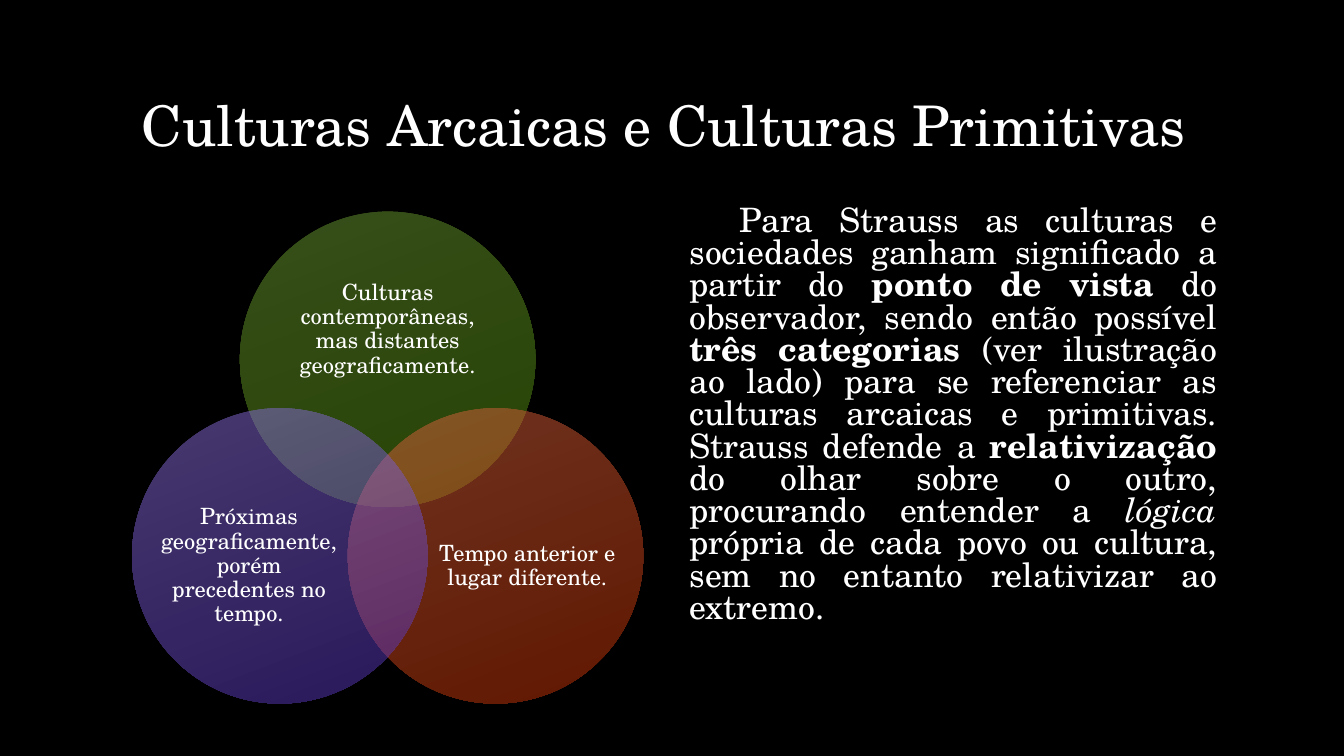
from lxml import etree
from pptx import Presentation
from pptx.dml.color import RGBColor
from pptx.enum import shapes, text
from pptx.oxml.ns import qn
from pptx.util import Inches, Pt

FONT = "TeX Gyre Schola"
WHITE = "FFFFFF"
DIAMETER = 2.93
TITLE = "Culturas Arcaicas e Culturas Primitivas"
CIRCLES = [
    ("Culturas contemporâneas, mas distantes geograficamente.",
     "6E9D35", "4E8808", (1.07, 0), (0.39, 0.51, 2.15, 1.32)),
    ("Tempo anterior e lugar diferente.",
     "DE6742", "C23002", (2.14, 1.95), (0.9, 0.76, 1.76, 1.61)),
    ("Próximas geograficamente, porém precedentes no tempo.",
     "8F73DF", "5331B6", (0, 1.95), (0.28, 0.76, 1.76, 1.61)),
]
BODY = [
    ("\tPara Strauss as culturas e sociedades ganham significado a partir do ", ""),
    ("ponto de vista ", "bold"),
    ("do observador, sendo então possível ", ""),
    ("três categorias ", "bold"),
    ("(ver ilustração ao lado) para se referenciar as culturas arcaicas e "
     "primitivas. Strauss defende a ", ""),
    ("relativização", "bold"),
    (" do olhar sobre o outro, procurando entender a ", ""),
    ("lógica", "italic"),
    (" própria de cada povo ou cultura, sem no entanto relativizar ao extremo.", ""),
]


def color(value):
    return RGBColor.from_string(value)


def add_text(slide, box, runs, size, spacing, align, anchor, inset=True):
    frame = slide.shapes.add_textbox(*map(Inches, box)).text_frame
    frame.word_wrap = True
    frame.vertical_anchor = anchor
    if not inset:
        frame.margin_left = frame.margin_right = 0
        frame.margin_top = frame.margin_bottom = 0
    paragraph = frame.paragraphs[0]
    paragraph.alignment = align
    paragraph.line_spacing = spacing
    for words, style in runs:
        run = paragraph.add_run()
        run.text = words
        font = run.font
        font.name = FONT
        font.size = Pt(size)
        font.color.rgb = color(WHITE)
        if style == "bold":
            font.bold = True
        elif style == "italic":
            font.italic = True


def add_circle(slide, left, top, light, dark):
    circle = slide.shapes.add_shape(
        shapes.MSO_SHAPE.OVAL, *map(Inches, (left, top, DIAMETER, DIAMETER)))
    circle.shadow.inherit = False
    circle.line.fill.background()
    circle.fill.gradient()
    circle.fill.gradient_angle = 291
    for stop, position, value in zip(circle.fill.gradient_stops, (0, 1), (light, dark)):
        stop.position = position
        stop.color.rgb = color(value)
    for tint in circle._element.spPr.iter(qn("a:srgbClr")):
        etree.SubElement(tint, qn("a:alpha"), val="50000")


def add_title(slide, box):
    add_text(slide, box, [(TITLE, "")], 40, 0.8,
             text.PP_ALIGN.LEFT, text.MSO_ANCHOR.BOTTOM)


def add_venn(slide, left, top):
    for label, light, dark, (dx, dy), (text_dx, text_dy, width, height) in CIRCLES:
        x, y = left + dx, top + dy
        add_circle(slide, x, y, light, dark)
        add_text(slide, (x + text_dx, y + text_dy, width, height), [(label, "")],
                 16, 0.9, text.PP_ALIGN.CENTER, text.MSO_ANCHOR.MIDDLE, inset=False)


def add_body(slide, box):
    add_text(slide, box, BODY, 24, 0.8, text.PP_ALIGN.JUSTIFY, text.MSO_ANCHOR.TOP)


def main():
    presentation = Presentation()
    presentation.slide_width = Inches(13.33)
    presentation.slide_height = Inches(7.5)
    slide = presentation.slides.add_slide(presentation.slide_layouts[6])
    slide.background.fill.solid()
    slide.background.fill.fore_color.rgb = color("000000")
    add_title(slide, (1.31, 0.36, 10.6, 1.25))
    add_venn(slide, 1.31, 2.1)
    add_body(slide, (6.74, 2, 5.43, 4.75))
    presentation.save("out.pptx")


if __name__ == "__main__":
    main()
